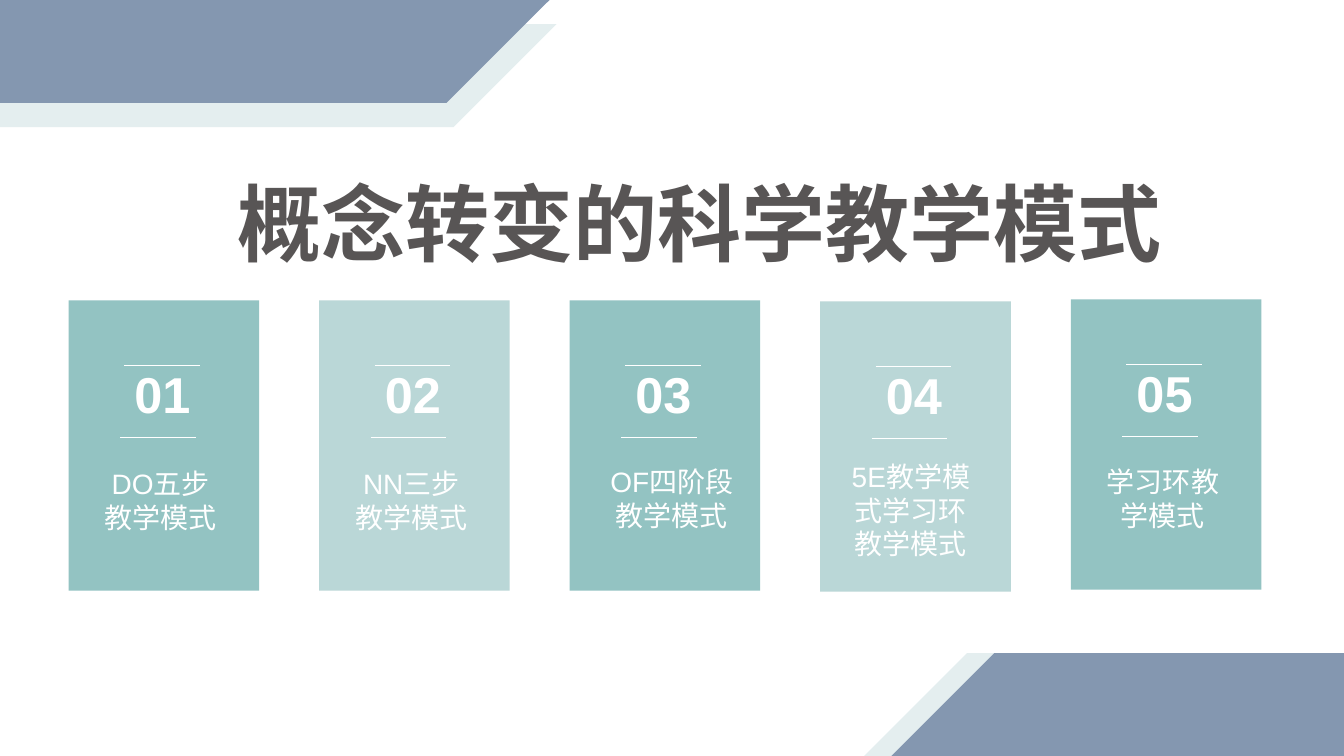
from lxml import etree
from pptx import Presentation, util as u
from pptx.dml.color import RGBColor
from pptx.enum import shapes, text
from pptx.oxml.ns import qn

BLUE, PALE = "8497B0", "E4EEEF"
TEAL, LIGHT_TEAL = "93C3C2", "BAD7D7"
WHITE, GREY = "FFFFFF", "585555"


def rgb(value):
    return RGBColor.from_string(value)


class Deck:
    """Holds the font and the current slide, and draws each kind of element."""

    def __init__(self, font):
        self.font = font
        self.prs = Presentation()
        self.prs.slide_width = u.Inches(13.33)
        self.prs.slide_height = u.Inches(7.5)
        self.s = self.prs.slides.add_slide(self.prs.slide_layouts[5])

    def shape(self, parent, kind, box, fill):
        sp = parent.shapes.add_shape(kind, *map(u.Inches, box))
        sp.shadow.inherit = False
        sp.fill.solid()
        sp.fill.fore_color.rgb = rgb(fill)
        sp.line.fill.background()
        return sp

    def band(self, left, top, fill):
        sp = self.shape(self.s, shapes.MSO_SHAPE.PARALLELOGRAM,
                        (left, top, 7.41, 1.02), fill)
        sp.adjustments[0] = 1.0

    def set_text(self, sp, words, size, color, bold=False):
        tf = sp.text_frame
        tf.text = words
        tf.word_wrap = True
        tf.auto_size = text.MSO_AUTO_SIZE.SHAPE_TO_FIT_TEXT
        tf.vertical_anchor = text.MSO_ANCHOR.TOP
        p = tf.paragraphs[0]
        p.alignment = text.PP_ALIGN.CENTER
        f = p.runs[0].font
        f.name, f.size, f.bold = self.font, u.Pt(size), bold
        f.color.rgb = rgb(color)

    def title(self, words, box):
        sp = self.s.shapes.title
        sp.left, sp.top, sp.width, sp.height = map(u.Inches, box)
        self.set_text(sp, words, 60, GREY, True)

    def label(self, parent, box, words, size, bold=False):
        sp = parent.shapes.add_textbox(*map(u.Inches, box))
        self.set_text(sp, words, size, WHITE, bold)

    def rule(self, parent, left, top, width):
        ends = map(u.Inches, (left, top, left + width, top))
        sp = parent.shapes.add_connector(shapes.MSO_CONNECTOR.STRAIGHT, *ends)
        sp.line.color.rgb = rgb(WHITE)
        sp.line.width = u.Pt(0.5)
        etree.SubElement(sp._element.spPr, qn("a:effectLst"))

    def card(self, left, top, fill, number, words, label_box):
        group = self.s.shapes.add_group_shape()
        self.shape(group, shapes.MSO_SHAPE.RECTANGLE, (left, top, 1.89, 2.88), fill)
        dx, dy, width, height = label_box
        self.label(group, (left + dx, top + dy, width, height), words, 20)
        self.label(group, (left + 0.51, top + 0.57, 0.84, 0.71), number, 36, True)
        self.rule(group, left + 0.55, top + 0.64, 0.75)
        self.rule(group, left + 0.51, top + 1.36, 0.75)


def main():
    deck = Deck("Arial")
    deck.band(-1.89, 0.24, PALE)
    deck.band(-1.96, 0, BLUE)
    deck.band(8.57, 6.48, PALE)
    deck.band(8.84, 6.48, BLUE)
    deck.title("概念转变的科学教学模式", (1.4, 1.65, 11.08, 1.11))

    models = [
        ("DO五步教学模式", 2.98, (0.25, 1.6, 1.33, 0.77)),
        ("NN三步教学模式", 2.98, (0.25, 1.6, 1.33, 0.77)),
        ("OF四阶段教学模式", 2.98, (0.25, 1.58, 1.53, 0.77)),
        ("5E教学模式学习环教学模式", 2.99, (0.12, 1.52, 1.56, 1.11)),
        ("学习环教学模式", 2.97, (0.25, 1.59, 1.33, 0.77)),
    ]
    first, last = 0.68, 10.62
    pitch = (last - first) / (len(models) - 1)
    for i, (words, top, label_box) in enumerate(models):
        fill = LIGHT_TEAL if i % 2 else TEAL
        deck.card(first + i * pitch, top, fill, f"{i + 1:02d}", words, label_box)

    deck.prs.save("out.pptx")


if __name__ == "__main__":
    main()
